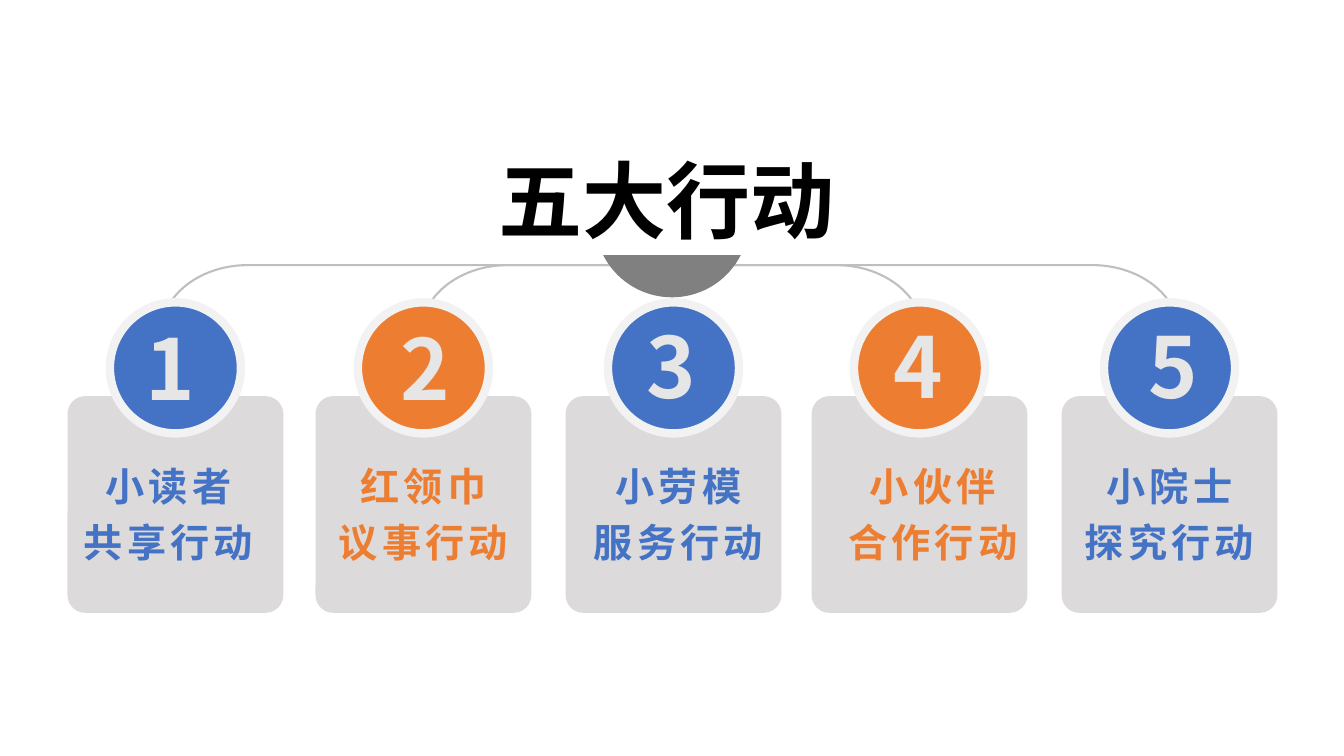
from lxml import etree
from pptx import Presentation
from pptx.dml.color import RGBColor
from pptx.enum import shapes, text
from pptx.oxml import ns
from pptx.util import Inches, Pt

BLUE = RGBColor(0x44, 0x72, 0xC4)
ORANGE = RGBColor(0xED, 0x7D, 0x31)
CARD_GRAY = RGBColor(0xDC, 0xDA, 0xDA)
LINE_GRAY = RGBColor(0xBF, 0xBF, 0xBF)
RING_GRAY = RGBColor(0xF2, 0xF2, 0xF2)
HUB_GRAY = RGBColor(0x80, 0x80, 0x80)
DIGIT_GRAY = RGBColor(0xE7, 0xE6, 0xE6)
BLACK = RGBColor(0, 0, 0)
WHITE = RGBColor(0xFF, 0xFF, 0xFF)
CJK_FONT = "Noto Sans CJK SC"
KIND = shapes.MSO_SHAPE

ACTIONS = [
    (0.67, 0.67, 1.34, 3.09, BLUE, ("小读者", "共享行动")),
    (3.13, 3.2, 3.87, 3.09, ORANGE, ("红领巾", "议事行动")),
    (5.61, 5.73, 6.31, 3.07, BLUE, ("小劳模", "服务行动")),
    (8.05, 8.25, 8.76, 3.07, ORANGE, ("小伙伴", "合作行动")),
    (10.53, 10.6, 11.29, 3.07, BLUE, ("小院士", "探究行动")),
]


def add_shape(slide, kind, box, fill=None, line=None, width=0.75, adjust=None):
    """Add a flat preset shape and return it."""
    shape = slide.shapes.add_shape(kind, *map(Inches, box))
    shape.shadow.inherit = False
    if fill is None:
        shape.fill.background()
    else:
        shape.fill.solid()
        shape.fill.fore_color.rgb = fill
    if line is None:
        shape.line.fill.background()
    else:
        shape.line.color.rgb = line
        shape.line.width = Pt(width)
    if adjust is not None:
        shape.adjustments[0] = adjust
    return shape


def write_lines(shape, lines, size, color, font, line_spacing=None, tracking=0):
    """Write centred bold paragraphs into a shape."""
    frame = shape.text_frame
    for index, line in enumerate(lines):
        paragraph = frame.add_paragraph() if index else frame.paragraphs[0]
        paragraph.alignment = text.PP_ALIGN.CENTER
        paragraph.line_spacing = line_spacing
        run = paragraph.add_run()
        run.text = line
        for name, value in {"size": Pt(size), "bold": True, "name": font}.items():
            setattr(run.font, name, value)
        run.font.color.rgb = color
        properties = run.font._element
        if tracking:
            properties.set("spc", str(tracking * 100))
        east_asian = etree.SubElement(properties, ns.qn("a:ea"))
        east_asian.set("typeface", CJK_FONT)


def write_headline(shape, line, color):
    """Write one large unwrapped line that sizes its shape."""
    frame = shape.text_frame
    settings = {
        "word_wrap": False,
        "auto_size": text.MSO_AUTO_SIZE.SHAPE_TO_FIT_TEXT,
        "vertical_anchor": text.MSO_ANCHOR.TOP,
    }
    for name, value in settings.items():
        setattr(frame, name, value)
    write_lines(shape, [line], 60, color, CJK_FONT)


def add_bracket(slide, box):
    """Add a bracket turned to open downwards."""
    bracket = add_shape(slide, KIND.RIGHT_BRACKET, box, line=LINE_GRAY,
                        width=1.5, adjust=1.254)
    bracket.rotation = 270


def add_label(slide, left, lines, color):
    """Add the two-line name of an action."""
    box = slide.shapes.add_textbox(*map(Inches, (left, 4.3, 2, 1.31)))
    settings = {
        "word_wrap": True,
        "vertical_anchor": text.MSO_ANCHOR.BOTTOM,
        "margin_bottom": 0,
    }
    for name, value in settings.items():
        setattr(box.text_frame, name, value)
    write_lines(box, lines, 28, color, "Arial", 1.2, 3)


def add_action(slide, number, action):
    """Add a card with its numbered circle and label."""
    card_left, label_left, digit_left, digit_top, color, lines = action
    add_shape(slide, KIND.ROUNDED_RECTANGLE, (card_left, 3.93, 2.14, 2.15),
              CARD_GRAY, adjust=0.082)
    add_shape(slide, KIND.OVAL, (card_left + 0.42, 3, 1.3, 1.3),
              color, RING_GRAY, 6)
    add_label(slide, label_left, lines, color)
    digit = slide.shapes.add_textbox(
        *map(Inches, (digit_left, digit_top, 0.66, 1.11)))
    write_headline(digit, str(number), DIGIT_GRAY)


def main():
    """Build and save the slide."""
    presentation = Presentation()
    presentation.slide_width = Inches(13.33)
    presentation.slide_height = Inches(7.5)
    slide = presentation.slides.add_slide(presentation.slide_layouts[6])
    add_bracket(slide, (6.3, -2.08, 0.69, 10.11))
    add_bracket(slide, (6.32, 0.48, 0.69, 4.99))
    for number, action in enumerate(ACTIONS, 1):
        add_action(slide, number, action)
    add_shape(slide, KIND.OVAL, (5.9, 1.42, 1.53, 1.53), HUB_GRAY)
    title = add_shape(slide, KIND.RECTANGLE, (4.85, 1.42, 3.53, 1.11), WHITE, WHITE)
    write_headline(title, "五大行动", BLACK)
    presentation.save("out.pptx")


if __name__ == "__main__":
    main()
